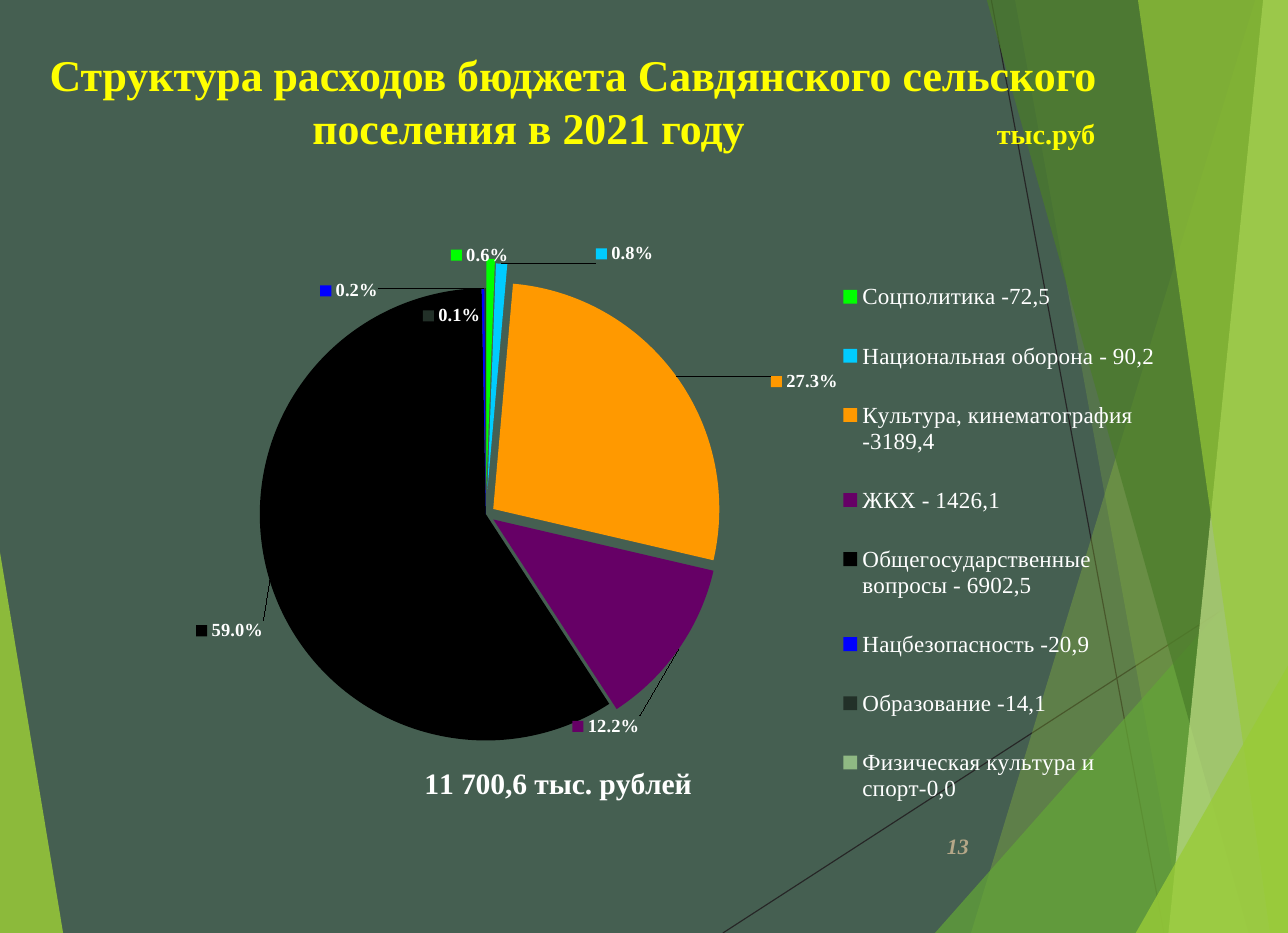
from dataclasses import dataclass

from lxml.etree import SubElement
from pptx import Presentation
from pptx.chart.data import CategoryChartData
from pptx.dml.color import RGBColor
from pptx.enum.chart import XL_CHART_TYPE, XL_LABEL_POSITION, XL_LEGEND_POSITION
from pptx.enum.shapes import MSO_CONNECTOR
from pptx.enum.text import MSO_ANCHOR, PP_ALIGN
from pptx.oxml import parse_xml
from pptx.oxml.ns import nsdecls, qn
from pptx.util import Emu, Inches, Pt

SERIF = "Times New Roman"
WIDTH, HEIGHT = Inches(11.42), Inches(8.27)

SLATE = RGBColor(0x45, 0x5F, 0x51)
LIME = RGBColor(0x99, 0xCB, 0x38)
GREEN = RGBColor(0x63, 0xA5, 0x37)
FOREST = RGBColor(0x4A, 0x7C, 0x29)
PALE_LIME = RGBColor(0xC2, 0xE0, 0x88)
CHARCOAL = RGBColor(0x26, 0x26, 0x26)
SAND = RGBColor(0xB5, 0xA7, 0x88)
YELLOW = RGBColor(0xFF, 0xFF, 0x00)
WHITE = RGBColor(0xFF, 0xFF, 0xFF)

Point = tuple[float, float]


@dataclass(frozen=True)
class Facet:
    """A translucent decorative polygon, with corners in percent of the slide."""
    colour: RGBColor
    opacity: int
    corners: tuple[Point, ...]


@dataclass(frozen=True)
class Expense:
    """A budget slice; the label shift is a share of the chart."""
    name: str
    share: float
    colour: RGBColor
    explosion: int = 0
    label_shift: Point | None = None


RAYS = (((56.13, 100), (100, 60.82)), ((76.97, 0), (90.37, 100)))
RIGHT_EDGE = ((100, 100), (100, 0))
FACETS = (
    Facet(LIME, 85, ((0, 59.2), (4.9, 100), (0, 100))),
    Facet(LIME, 30, ((97.46, 0), (75.39, 100), *RIGHT_EDGE)),
    Facet(LIME, 20, ((78.81, 0), (91.94, 100), *RIGHT_EDGE)),
    Facet(GREEN, 72, ((72.59, 100), (100, 57.19), (100, 100))),
    Facet(FOREST, 70, ((76.62, 0), (96.94, 100), *RIGHT_EDGE)),
    Facet(PALE_LIME, 70, ((98.07, 0), (90.72, 100), *RIGHT_EDGE)),
    Facet(LIME, 65, ((88.35, 0), (98.6, 100), *RIGHT_EDGE)),
    Facet(LIME, 80, ((88.18, 100), (100, 71.34), (100, 100))),
)
EXPENSES = (
    Expense("Соцполитика -72,5", 0.006, RGBColor(0, 0xFF, 0), 13, (-0.01, 0.02)),
    Expense("Национальная оборона - 90,2", 0.008, RGBColor(0, 0xCC, 0xFF), 11, (0.11, 0.01)),
    Expense("Культура, кинематография -3189,4", 0.273, RGBColor(0xFF, 0x99, 0), 4, (0.08, 0.03)),
    Expense("ЖКХ - 1426,1", 0.122, RGBColor(0x66, 0, 0x66), 4, (-0.1, 0.1)),
    Expense("Общегосударственные вопросы - 6902,5", 0.59, RGBColor(0, 0, 0), 0, (0, 0.06)),
    Expense("Нацбезопасность -20,9", 0.002, RGBColor(0, 0, 0xFF), 0, (-0.12, 0.03)),
    Expense("Образование -14,1", 0.001, RGBColor(0x22, 0x30, 0x28), 0, (-0.03, 0.07)),
    Expense("Физическая культура и спорт-0,0", 0, RGBColor(0x8F, 0xB9, 0x83)),
)


def across(percent: float) -> Emu:
    """Return a percentage of the slide width."""
    return Emu(round(WIDTH * percent / 100))


def down(percent: float) -> Emu:
    """Return a percentage of the slide height."""
    return Emu(round(HEIGHT * percent / 100))


def frame(left: float, top: float, width: float, height: float) -> tuple[Emu, ...]:
    """Return a box given in percent of the slide."""
    return across(left), down(top), across(width), down(height)


def style(font, size: float, colour: RGBColor, bold: bool = False, italic: bool = False) -> None:
    """Apply the serif look to a font."""
    font.name, font.size, font.bold, font.italic = SERIF, Pt(size), bold, italic
    font.color.rgb = colour


def add_run(paragraph, wording: str, size: float, colour: RGBColor, italic: bool = False) -> None:
    """Append one bold run to a paragraph."""
    run = paragraph.add_run()
    run.text = wording
    style(run.font, size, colour, True, italic)


def add_ray(slide, start: Point, end: Point) -> None:
    """Draw a thin background line."""
    ray = slide.shapes.add_connector(
        MSO_CONNECTOR.STRAIGHT, across(start[0]), down(start[1]), across(end[0]), down(end[1]))
    ray.line.color.rgb = CHARCOAL
    ray.line.width = Pt(0.75)
    SubElement(ray.element.spPr, qn("a:effectLst"))


def add_facet(slide, facet: Facet) -> None:
    """Draw one translucent polygon."""
    first, *others = [(across(x), down(y)) for x, y in facet.corners]
    outline = slide.shapes.build_freeform(*first)
    outline.add_line_segments(others)
    polygon = outline.convert_to_shape()
    polygon.shadow.inherit = False
    polygon.line.fill.background()
    polygon.fill.solid()
    polygon.fill.fore_color.rgb = facet.colour
    tint = polygon.element.spPr.find(f".//{qn('a:srgbClr')}")
    SubElement(tint, qn("a:alpha"), val=str(facet.opacity * 1000))


def place(part, index: int, modes: str = "", **position: float) -> None:
    """Give a chart part a manual layout at the given child index."""
    for old in part.findall(qn("c:layout")):
        part.remove(old)
    layout = parse_xml(f"<c:layout {nsdecls('c')}><c:manualLayout/></c:layout>")
    if modes == "inner":
        SubElement(layout[0], qn("c:layoutTarget"), val="inner")
    if modes:
        for axis in ("xMode", "yMode"):
            SubElement(layout[0], qn(f"c:{axis}"), val="edge")
    for key, share in position.items():
        SubElement(layout[0], qn(f"c:{key}"), val=str(share))
    part.insert(index, layout)


def format_slices(series) -> None:
    """Colour, explode and label every slice."""
    labels = series.data_labels
    labels.show_value = False
    labels.number_format, labels.number_format_is_linked = "0.0%", False
    for index, expense in enumerate(EXPENSES):
        piece = series.points[index]
        piece.format.fill.solid()
        piece.format.fill.fore_color.rgb = expense.colour
        piece.format.line.fill.background()
        if expense.explosion:
            wedge = series._element.findall(qn("c:dPt"))[-1]
            wedge.insert(1, parse_xml(f'<c:explosion {nsdecls("c")} val="{expense.explosion}"/>'))
        if expense.label_shift:
            style(piece.data_label.font, 11.8, WHITE, True)
            piece.data_label.position = XL_LABEL_POSITION.OUTSIDE_END
            caption = series._element.findall(f".//{qn('c:dLbl')}")[-1]
            caption.find(qn("c:showLegendKey")).set("val", "1")
            place(caption, 1, x=expense.label_shift[0], y=expense.label_shift[1])


def add_budget_pie(slide) -> None:
    """Add the expense pie with its total and legend."""
    budget = CategoryChartData(number_format="0.0%")
    budget.categories = [expense.name for expense in EXPENSES]
    budget.add_series("Series 1", [expense.share for expense in EXPENSES])
    chart = slide.shapes.add_chart(
        XL_CHART_TYPE.PIE, *frame(5.69, 22.13, 86.6, 67.35), budget).chart
    style(chart.font, 14.7, WHITE)
    chart.plots[0].vary_by_categories = True
    format_slices(chart.plots[0].series[0])
    add_run(chart.chart_title.text_frame.paragraphs[0], "11 700,6 тыс. рублей", 18.9, WHITE)
    chart.chart_title.include_in_layout = False
    chart.has_legend = True
    chart.legend.position = XL_LEGEND_POSITION.RIGHT
    chart.legend.include_in_layout = False
    style(chart.legend.font, 14.7, WHITE)
    body = chart.element.chart
    place(body.plotArea, 0, "inner", x=0, y=0.13, w=0.74, h=0.72)
    place(body.find(qn("c:title")), 1, "edge", x=0.31, y=0.88)
    place(body.find(qn("c:legend")), 1, "edge", x=0.68, y=0.07, w=0.3, h=0.93)


def add_heading(slide) -> None:
    """Fill the title placeholder, with the unit set at a right tab."""
    heading = slide.shapes.title
    heading.left, heading.top, heading.width, heading.height = frame(2.97, 4.5, 95, 12.8)
    text = heading.text_frame
    text.word_wrap, text.vertical_anchor = True, MSO_ANCHOR.TOP
    line = text.paragraphs[0]
    line.alignment = PP_ALIGN.LEFT
    stops = SubElement(line._p.get_or_add_pPr(), qn("a:tabLst"))
    for position, side in ((20.4, "l"), (81.2, "r")):
        SubElement(stops, qn("a:tab"), pos=str(across(position)), algn=side)
    add_run(line, "Структура расходов бюджета Савдянского сельского", 28, YELLOW)
    line.add_line_break()
    add_run(line, "\tпоселения в 2021 году\t", 28, YELLOW)
    add_run(line, "тыс.руб", 18, YELLOW)
    slide.shapes.element.append(heading.element)


def add_page_number(slide) -> None:
    """Add the page number at the lower right."""
    number = slide.shapes.add_textbox(*frame(70.49, 88.03, 5.6, 5.32)).text_frame
    number.word_wrap, number.vertical_anchor = True, MSO_ANCHOR.MIDDLE
    number.paragraphs[0].alignment = PP_ALIGN.RIGHT
    add_run(number.paragraphs[0], "13", 14, SAND, True)


def main() -> None:
    """Build and save the slide."""
    deck = Presentation()
    deck.slide_width, deck.slide_height = WIDTH, HEIGHT
    slide = deck.slides.add_slide(deck.slide_layouts[5])
    slide.background.fill.solid()
    slide.background.fill.fore_color.rgb = SLATE
    for start, end in RAYS:
        add_ray(slide, start, end)
    for facet in FACETS:
        add_facet(slide, facet)
    add_page_number(slide)
    add_budget_pie(slide)
    add_heading(slide)
    deck.save("out.pptx")


if __name__ == "__main__":
    main()
